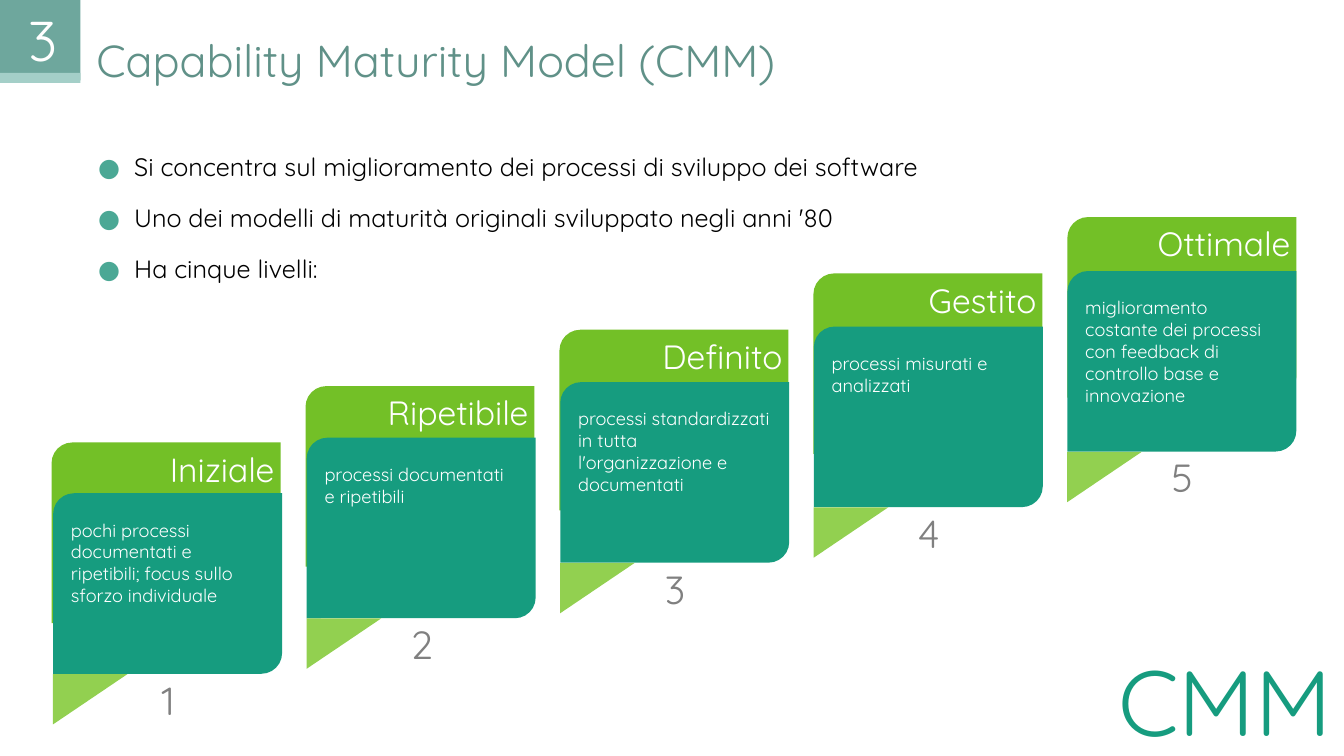
from lxml import etree
from pptx import Presentation
from pptx.dml.color import RGBColor
from pptx.enum.shapes import MSO_SHAPE
from pptx.enum.text import MSO_ANCHOR, PP_ALIGN
from pptx.oxml.ns import qn
from pptx.util import Cm, Pt

RECTANGLE = MSO_SHAPE.RECTANGLE
ELLIPSE = MSO_SHAPE.OVAL
TRIANGLE = MSO_SHAPE.RIGHT_TRIANGLE
LEAF = MSO_SHAPE.ROUND_2_DIAG_RECTANGLE
LEFT, CENTER, RIGHT = PP_ALIGN.LEFT, PP_ALIGN.CENTER, PP_ALIGN.RIGHT
TOP, MIDDLE = MSO_ANCHOR.TOP, MSO_ANCHOR.MIDDLE

FONT = "Quicksand"
WHITE = RGBColor(0xFF, 0xFF, 0xFF)
BLACK = RGBColor(0x00, 0x00, 0x00)
GRAY = RGBColor(0x80, 0x80, 0x80)
TEAL = RGBColor(0x16, 0x9C, 0x7F)
GREEN = RGBColor(0x73, 0xC0, 0x27)
LIGHT_GREEN = RGBColor(0x92, 0xD0, 0x50)
TITLE_COLOR = RGBColor(0x60, 0x91, 0x88)
BADGE = RGBColor(0x6E, 0xA7, 0x9D)
BADGE_EDGE = RGBColor(0xA4, 0xCF, 0xC8)
BULLET = RGBColor(0x4B, 0xA8, 0x95)

CARD_SIZE = (5.77, 4.55)

BULLETS = [
    "Si concentra sul miglioramento dei processi di sviluppo dei software",
    "Uno dei modelli di maturità originali sviluppato negli anni '80",
    "Ha cinque livelli:",
]
LEVELS = [
    ("Iniziale", "pochi processi documentati e ripetibili; focus sullo sforzo individuale"),
    ("Ripetibile", "processi documentati e ripetibili"),
    ("Definito", "processi standardizzati in tutta l'organizzazione e documentati"),
    ("Gestito", "processi misurati e analizzati"),
    ("Ottimale", "miglioramento costante dei processi con feedback di controllo base e innovazione"),
]


def write_text(paragraph, text, size, color, align=LEFT, space_after=0):
    paragraph.alignment = align
    paragraph.space_after = Pt(space_after)
    run = paragraph.add_run()
    run.text = text
    run.font.name = FONT
    run.font.size = Pt(size)
    run.font.color.rgb = color


def set_margins(holder, left, top, right, bottom):
    holder.margin_left, holder.margin_top = Cm(left), Cm(top)
    holder.margin_right, holder.margin_bottom = Cm(right), Cm(bottom)


def add_filled_shape(slide, kind, left, top, width, height, color=None):
    shape = slide.shapes.add_shape(kind, Cm(left), Cm(top), Cm(width), Cm(height))
    shape.shadow.inherit = False
    shape.line.fill.background()
    if color is None:
        shape.fill.background()
    else:
        shape.fill.solid()
        shape.fill.fore_color.rgb = color
    return shape


def add_leaf(slide, left, top, color):
    leaf = add_filled_shape(slide, LEAF, left, top, *CARD_SIZE, color)
    leaf.adjustments[0] = 0.115
    leaf.adjustments[1] = 0
    return leaf


def add_text(slide, text, left, top, width, height, anchor=TOP, wrap=True, **text_format):
    box = slide.shapes.add_textbox(Cm(left), Cm(top), Cm(width), Cm(height))
    frame = box.text_frame
    frame.word_wrap = wrap
    frame.vertical_anchor = anchor
    write_text(frame.paragraphs[0], text, **text_format)


def add_bullet(paragraph):
    properties = paragraph._p.get_or_add_pPr()
    properties.set("marL", str(Cm(1.27)))
    properties.set("indent", str(Cm(-0.91)))
    color = etree.SubElement(properties, qn("a:buClr"))
    etree.SubElement(color, qn("a:srgbClr")).set("val", str(BULLET))
    etree.SubElement(properties, qn("a:buFont")).set("typeface", FONT)
    etree.SubElement(properties, qn("a:buChar")).set("char", "●")


def remove_borders(cell):
    properties = cell._tc.get_or_add_tcPr()
    for side in ("a:lnL", "a:lnR", "a:lnT", "a:lnB"):
        border = etree.SubElement(properties, qn(side))
        border.set("w", "0")
        etree.SubElement(border, qn("a:noFill"))


def add_bullet_table(slide, lines):
    frame = slide.shapes.add_table(1, 1, Cm(1.35), Cm(3.3), Cm(23.93), Cm(4.55))
    table = frame.table
    table.first_row = False
    table.horz_banding = False
    cell = table.cell(0, 0)
    remove_borders(cell)
    cell.fill.background()
    set_margins(cell, 0.76, 0.51, 0.76, 0.51)
    text_frame = cell.text_frame
    for index, line in enumerate(lines):
        paragraph = text_frame.add_paragraph() if index else text_frame.paragraphs[0]
        write_text(paragraph, line, size=18, color=BLACK, space_after=14)
        add_bullet(paragraph)


def add_level(slide, index, name, description):
    # Green header card behind
    header = add_leaf(slide, 1.3 + 6.4 * index, 11.15 - 1.42 * index, GREEN)
    frame = header.text_frame
    frame.vertical_anchor = TOP
    set_margins(frame, 0.25, 0, 0, 0.13)
    write_text(frame.paragraphs[0], name, size=24, color=WHITE, align=RIGHT)

    # Teal panel, its tail, description and number
    left, top = 1.34 + 6.39 * index, 12.43 - 1.4 * index
    add_leaf(slide, left, top, TEAL)
    tail = add_filled_shape(slide, TRIANGLE, left + 0.3, top + 4.25, 1.27, 1.88, LIGHT_GREEN)
    tail.rotation = 90
    add_text(slide, description, left + 0.2, top + 0.52, 5.36, 2.5,
             size=13, color=WHITE, space_after=14)
    add_text(slide, str(index + 1), left + 2.36, top + 4.48, 1.07, 1.45,
             wrap=False, size=28, color=GRAY, align=CENTER)


def add_badge(slide):
    add_filled_shape(slide, RECTANGLE, 0, 0, 2.03, 2.03, BADGE)
    add_filled_shape(slide, RECTANGLE, 0, 1.84, 2.03, 0.25, BADGE_EDGE)
    circle = add_filled_shape(slide, ELLIPSE, 0.06, -0.02, 2.03, 2.03)
    circle.text_frame.vertical_anchor = MIDDLE
    write_text(circle.text_frame.paragraphs[0], "3", size=40, color=WHITE, align=CENTER)


def main():
    presentation = Presentation()
    presentation.slide_width = Cm(33.87)
    presentation.slide_height = Cm(19.05)
    slide = presentation.slides.add_slide(presentation.slide_layouts[6])

    # Introduction, placed behind the staircase
    add_bullet_table(slide, BULLETS)

    # Staircase of maturity levels
    for index, (name, description) in enumerate(LEVELS):
        add_level(slide, index, name, description)

    # Title and section number
    add_text(slide, "Capability Maturity Model (CMM)", 2.18, 0.69, 20.2, 1.62,
             size=32, color=TITLE_COLOR)
    add_badge(slide)

    # Large acronym in the corner
    add_text(slide, "CMM", 25.05, 16.44, 8.76, 2.38,
             anchor=MIDDLE, size=66, color=TEAL, align=RIGHT)

    presentation.save("out.pptx")


if __name__ == "__main__":
    main()
